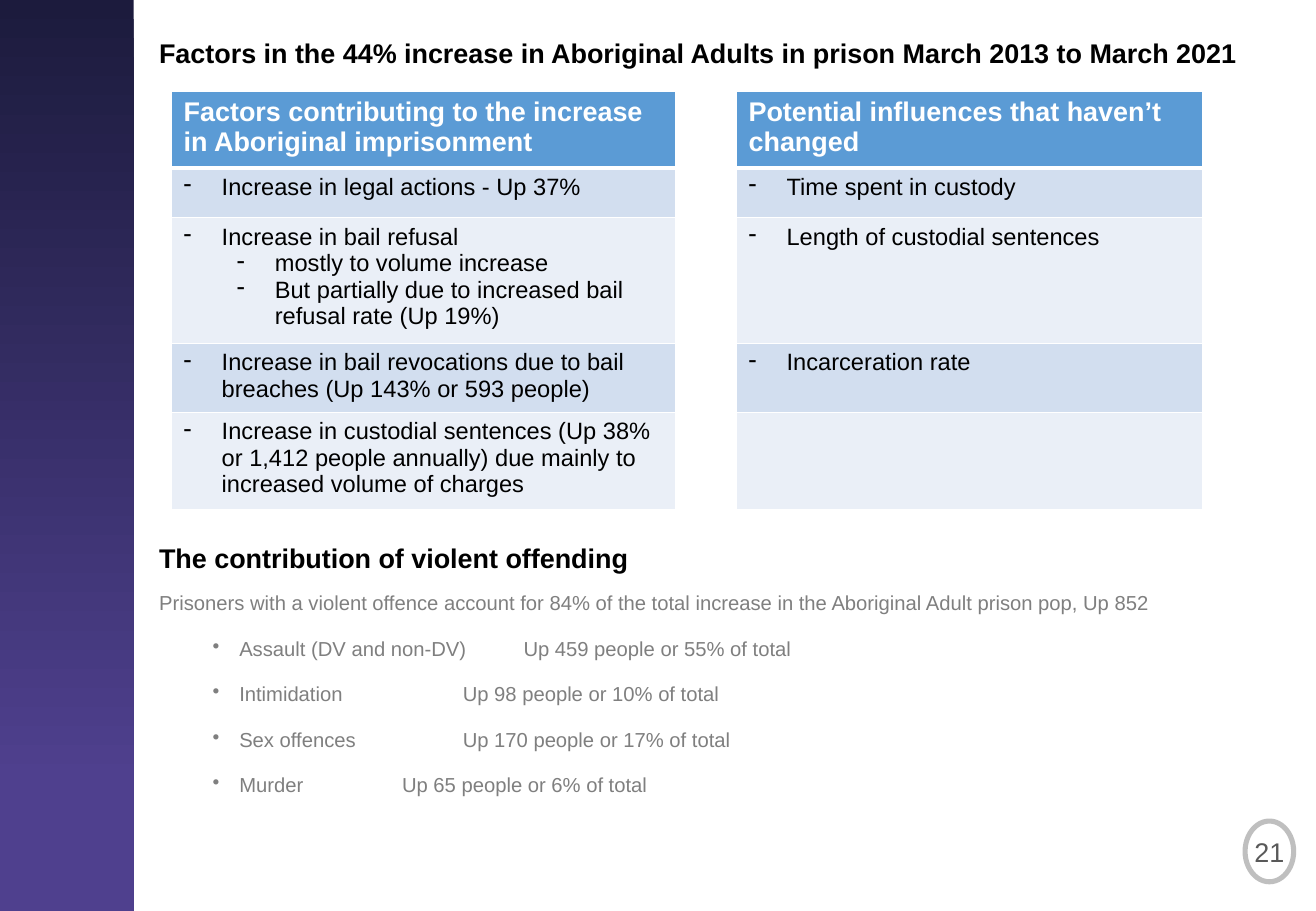
from lxml import etree
from pptx import Presentation
from pptx.dml.color import RGBColor
from pptx.enum.shapes import MSO_SHAPE
from pptx.enum.text import MSO_ANCHOR, PP_ALIGN
from pptx.oxml.ns import qn
from pptx.util import Pt

RECT, OVAL = MSO_SHAPE.RECTANGLE, MSO_SHAPE.OVAL
MIDDLE, CENTER = MSO_ANCHOR.MIDDLE, PP_ALIGN.CENTER
FONT = "Arial"
WHITE, BLACK, GREY = "FFFFFF", "000000", "7F7F7F"
HEAD, BANDS = "5B9BD5", ("D2DEEF", "EAEFF7")
LEFT = 90

COLS = (298.8, 36, 276.5)
ROWS = (42.4, 29.5, 70, 39, 54)
TITLES = ("Factors contributing to the increase in Aboriginal imprisonment",
          "Potential influences that haven’t changed")
# Each cell lists its points as (level, text)
FACTORS = (
    [(0, "Increase in legal actions - Up 37%")],
    [(0, "Increase in bail refusal"),
     (1, "mostly to volume increase"),
     (1, "But partially due to increased bail refusal rate (Up 19%)")],
    [(0, "Increase in bail revocations due to bail breaches "
         "(Up 143% or 593 people)")],
    [(0, "Increase in custodial sentences (Up 38% or 1,412 people annually) "
         "due mainly to increased volume of charges")],
)
STEADY = (
    [(0, "Time spent in custody")],
    [(0, "Length of custodial sentences")],
    [(0, "Incarceration rate")],
    [],
)
CRIMES = (
    "Assault (DV and non-DV)\tUp 459 people or 55% of total",
    "Intimidation\t\tUp 98 people or 10% of total",
    "Sex offences\t\tUp 170 people or 17% of total",
    "Murder\t\tUp 65 people or 6% of total",
)


def color(code):
    return RGBColor.from_string(code)


def next_para(frame):
    """Return the unused first paragraph, or a new one."""
    first = frame.paragraphs[0]
    return frame.add_paragraph() if first.runs else first


def add_run(para, text, size, code, bold=False):
    run = para.add_run()
    run.text = text
    font = run.font
    font.name, font.size, font.bold = FONT, Pt(size), bold
    font.color.rgb = color(code)


def set_bullet(para, mark, indent, hang):
    props = para._p.get_or_add_pPr()
    props.set("marL", str(Pt(indent)))
    props.set("indent", str(-Pt(hang)))
    etree.SubElement(props, qn("a:buChar")).set("char", mark)


def set_insets(frame):
    frame.margin_left = frame.margin_right = Pt(4.3)
    frame.margin_top = frame.margin_bottom = Pt(2.2)


def add_box(slide, top, width, height):
    box = slide.shapes.add_textbox(Pt(LEFT), Pt(top), Pt(width), Pt(height))
    frame = box.text_frame
    frame.word_wrap = True
    set_insets(frame)
    return frame


def add_title(slide, top, text):
    para = next_para(add_box(slide, top, 676, 48))
    para.line_spacing = 1.1
    add_run(para, text, 16, BLACK, True)


def add_band(slide):
    band = slide.shapes.add_shape(RECT, 0, 0, Pt(79.2), Pt(540))
    band.shadow.inherit = False
    band.line.fill.background()
    band.fill.gradient()
    band.fill.gradient_angle = 270
    stops = ((0, "1C1B3D"), (0.86, "4F408E"))
    for stop, (place, code) in zip(band.fill.gradient_stops, stops):
        stop.position = place
        stop.color.rgb = color(code)


def add_badge(slide, text):
    badge = slide.shapes.add_shape(OVAL, Pt(738), Pt(486.7), Pt(28.8), Pt(36))
    badge.shadow.inherit = False
    badge.fill.solid()
    badge.fill.fore_color.rgb = color(WHITE)
    badge.line.color.rgb = color("BFBFBF")
    badge.line.width = Pt(3)
    frame = badge.text_frame
    frame.word_wrap = False
    frame.vertical_anchor = MIDDLE
    set_insets(frame)
    para = next_para(frame)
    para.alignment = CENTER
    add_run(para, text, 16, "595959")


def set_borders(cell, top, bottom):
    props = cell._tc.get_or_add_tcPr()
    for side, width in (("L", 1), ("R", 1), ("T", top), ("B", bottom)):
        line = etree.SubElement(props, qn("a:ln" + side), w=str(Pt(width)))
        fill = etree.SubElement(line, qn("a:solidFill"))
        etree.SubElement(fill, qn("a:srgbClr"), val=WHITE)


def fill_cell(cell, code):
    cell.fill.solid()
    cell.fill.fore_color.rgb = color(code)


def add_points(cell, points):
    for level, text in points:
        para = next_para(cell.text_frame)
        para.level = level
        set_bullet(para, "-", 22.5 + 31.5 * level, 22.5)
        add_run(para, text, 14, BLACK)


def add_factors(slide):
    table = slide.shapes.add_table(
        len(ROWS), len(COLS), Pt(101.7), Pt(54),
        Pt(sum(COLS)), Pt(sum(ROWS))).table
    table.first_row = table.horz_banding = False
    for col, width in zip(table.columns, COLS):
        col.width = Pt(width)
    for i, (row, height) in enumerate(zip(table.rows, ROWS)):
        row.height = Pt(height)
        for cell in row.cells:
            set_borders(cell, 3 if i == 1 else 1, 3 if i == 0 else 1)
        row.cells[1].fill.background()
    for j, title, points in ((0, TITLES[0], FACTORS), (2, TITLES[1], STEADY)):
        head = table.cell(0, j)
        fill_cell(head, HEAD)
        add_run(next_para(head.text_frame), title, 16, WHITE, True)
        for i, items in enumerate(points):
            cell = table.cell(i + 1, j)
            fill_cell(cell, BANDS[i % 2])
            add_points(cell, items)


def add_crimes(slide):
    frame = add_box(slide, 340.6, 639.4, 138)
    para = next_para(frame)
    para.line_spacing = 1.5
    add_run(para, "Prisoners with a violent offence account for 84% of the total "
            "increase in the Aboriginal Adult prison pop, Up 852", 12, GREY)
    for crime in CRIMES:
        para = next_para(frame)
        para.level = 1
        para.line_spacing = 1.5
        para.space_before = Pt(5.4)
        set_bullet(para, "•", 47.5, 15.8)
        add_run(para, crime, 12, GREY)


def main():
    deck = Presentation()
    deck.slide_width, deck.slide_height = Pt(780), Pt(540)
    slide = deck.slides.add_slide(deck.slide_layouts[6])
    add_band(slide)
    add_badge(slide, "21")
    add_title(slide, 17.3, "Factors in the 44% increase in Aboriginal Adults "
              "in prison March 2013 to March 2021")
    add_factors(slide)
    add_crimes(slide)
    add_title(slide, 316.8, "The contribution of violent offending")
    deck.save("out.pptx")


if __name__ == "__main__":
    main()
